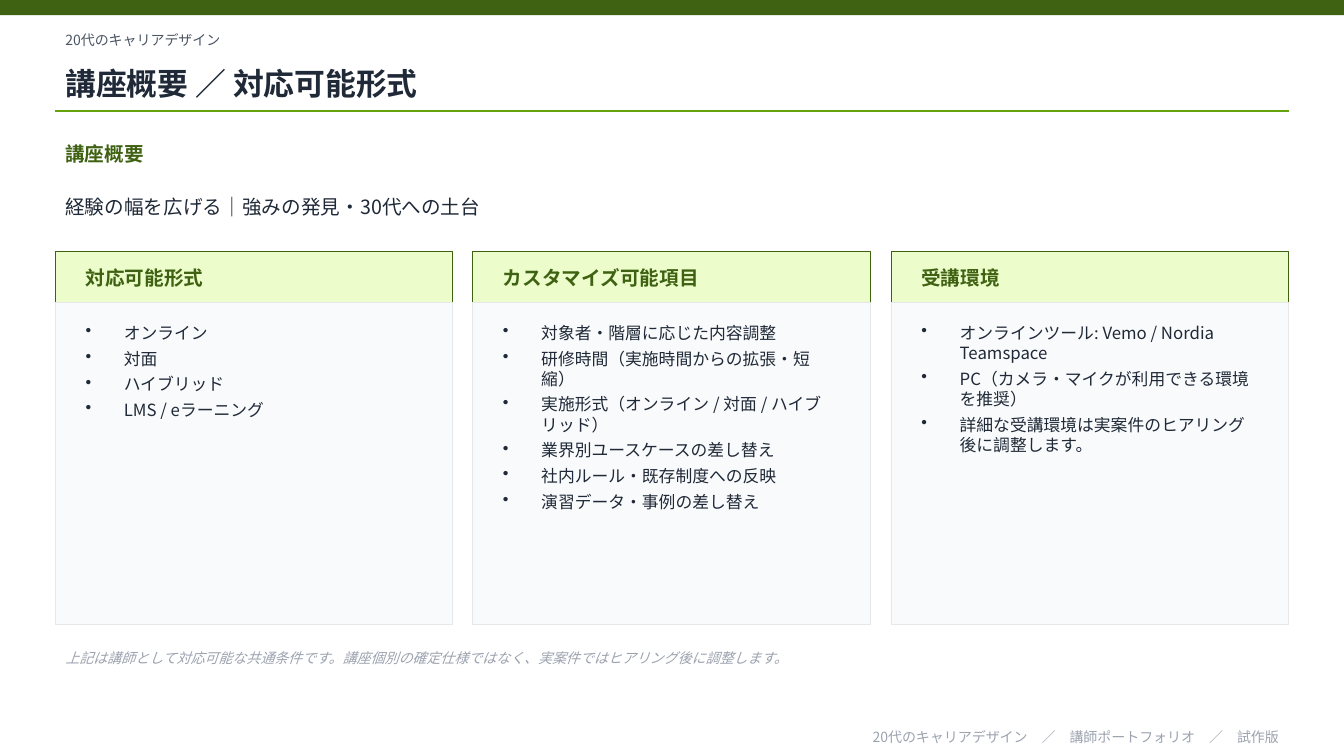
from lxml import etree
from pptx import Presentation
from pptx.dml.color import RGBColor
from pptx.enum.shapes import MSO_CONNECTOR, MSO_SHAPE
from pptx.enum.text import MSO_ANCHOR, PP_ALIGN
from pptx.oxml.ns import qn

RECT = MSO_SHAPE.RECTANGLE
LINE = MSO_CONNECTOR.STRAIGHT
TOP, MID = MSO_ANCHOR.TOP, MSO_ANCHOR.MIDDLE
LEFT, RIGHT = PP_ALIGN.LEFT, PP_ALIGN.RIGHT

PX = 9144
PT = 12700
FACE = "Noto Sans CJK JP"

GREEN = RGBColor(0x3F, 0x62, 0x12)
LIME = RGBColor(0x65, 0xA3, 0x0D)
PALE = RGBColor(0xEC, 0xFC, 0xCB)
INK = RGBColor(0x1F, 0x29, 0x37)
GREY = RGBColor(0x4B, 0x55, 0x63)
MUTED = RGBColor(0x9C, 0xA3, 0xAF)
PANEL = RGBColor(0xF9, 0xFA, 0xFB)
EDGE = RGBColor(0xE5, 0xE7, 0xEB)

WIDE, HIGH = 1333, 750
SIDE, SPAN = 55, 1223
GAP, INSET = 20, 20
HEAD_TOP, HEAD_TALL, BODY_TALL = 250, 50, 320
INDENT = 38

TAG = {"size": 10 * PT, "color": GREY}
TITLE = {"size": 22 * PT, "color": INK, "bold": True}
LABEL = {"size": 14 * PT, "color": GREEN, "bold": True}
LEAD = {"size": 14 * PT, "color": INK}
ITEM = {"size": 12 * PT, "color": INK}
NOTE = {"size": 10 * PT, "color": MUTED, "italic": True}
FOOT = {"size": 10 * PT, "color": MUTED}

ROWS = [
    (25, 30, "20代のキャリアデザイン", TAG, LEFT),
    (55, 55, "講座概要 ／ 対応可能形式", TITLE, LEFT),
    (135, 35, "講座概要", LABEL, LEFT),
    (175, 60, "経験の幅を広げる｜強みの発見・30代への土台", LEAD, LEFT),
    (635, 35, "上記は講師として対応可能な共通条件です。講座個別の確定仕様ではなく、"
     "実案件ではヒアリング後に調整します。", NOTE, LEFT),
    (720, 22, "20代のキャリアデザイン　／　講師ポートフォリオ　／　試作版", FOOT, RIGHT),
]

CARDS = [
    ("対応可能形式", ["オンライン", "対面", "ハイブリッド", "LMS / eラーニング"]),
    ("カスタマイズ可能項目", [
        "対象者・階層に応じた内容調整",
        "研修時間（実施時間からの拡張・短縮）",
        "実施形式（オンライン / 対面 / ハイブリッド）",
        "業界別ユースケースの差し替え",
        "社内ルール・既存制度への反映",
        "演習データ・事例の差し替え",
    ]),
    ("受講環境", [
        "オンラインツール: Vemo / Nordia Teamspace",
        "PC（カメラ・マイクが利用できる環境を推奨）",
        "詳細な受講環境は実案件のヒアリング後に調整します。",
    ]),
]


def scale(*sizes):
    return [size * PX for size in sizes]


def add_box(slide, area, fill, edge=None):
    box = slide.shapes.add_shape(RECT, *scale(*area))
    box.shadow.inherit = False
    box.fill.solid()
    box.fill.fore_color.rgb = fill
    if edge is None:
        box.line.fill.background()
    else:
        box.line.color.rgb = edge
        box.line.width = int(0.75 * PT)


def add_rule(slide, left, top, right, color):
    rule = slide.shapes.add_connector(LINE, *scale(left, top, right, top))
    rule.line.color.rgb = color
    rule.line.width = PT
    etree.SubElement(rule._element.spPr, qn("a:effectLst"))


def set_font(run, style):
    for name, value in style.items():
        if name == "color":
            run.font.color.rgb = value
        else:
            setattr(run.font, name, value)
    run.font.name = FACE
    etree.SubElement(run.font._element, qn("a:ea"), typeface=FACE)


def set_bullet(para):
    props = para._p.get_or_add_pPr()
    props.set("marL", str(INDENT * PX))
    props.set("indent", str(-INDENT * PX))
    etree.SubElement(props, qn("a:buChar"), char="•")
    para.space_after = 4 * PT


def add_text(slide, area, lines, style, align=LEFT, anchor=MID, bullet=False):
    frame = slide.shapes.add_textbox(*scale(*area)).text_frame
    frame.word_wrap = True
    frame.vertical_anchor = anchor
    for index, line in enumerate(lines):
        para = frame.add_paragraph() if index else frame.paragraphs[0]
        para.alignment = align
        if bullet:
            set_bullet(para)
        run = para.add_run()
        run.text = line
        set_font(run, style)


def add_card(slide, left, width, title, items):
    head = (HEAD_TOP, width, HEAD_TALL)
    body = HEAD_TOP + HEAD_TALL
    inner, room = left + INSET, width - 2 * INSET
    add_box(slide, (left, *head), PALE, GREEN)
    add_text(slide, (inner, HEAD_TOP, room, HEAD_TALL), [title], LABEL)
    add_box(slide, (left, body, width, BODY_TALL), PANEL, EDGE)
    add_text(slide, (inner, body + 15, room, BODY_TALL - 35), items, ITEM,
             anchor=TOP, bullet=True)


def main():
    deck = Presentation()
    deck.slide_width, deck.slide_height = scale(WIDE, HIGH)
    slide = deck.slides.add_slide(deck.slide_layouts[6])
    add_box(slide, (0, 0, WIDE, 15), GREEN)
    add_rule(slide, SIDE, 110, SIDE + SPAN, LIME)
    for top, tall, text, style, align in ROWS:
        add_text(slide, (SIDE, top, SPAN, tall), [text], style, align)
    pitch = (SPAN + GAP) / len(CARDS)
    for index, (title, items) in enumerate(CARDS):
        left = round(SIDE + index * pitch)
        add_card(slide, left, round(pitch - GAP), title, items)
    deck.save("out.pptx")


if __name__ == "__main__":
    main()
